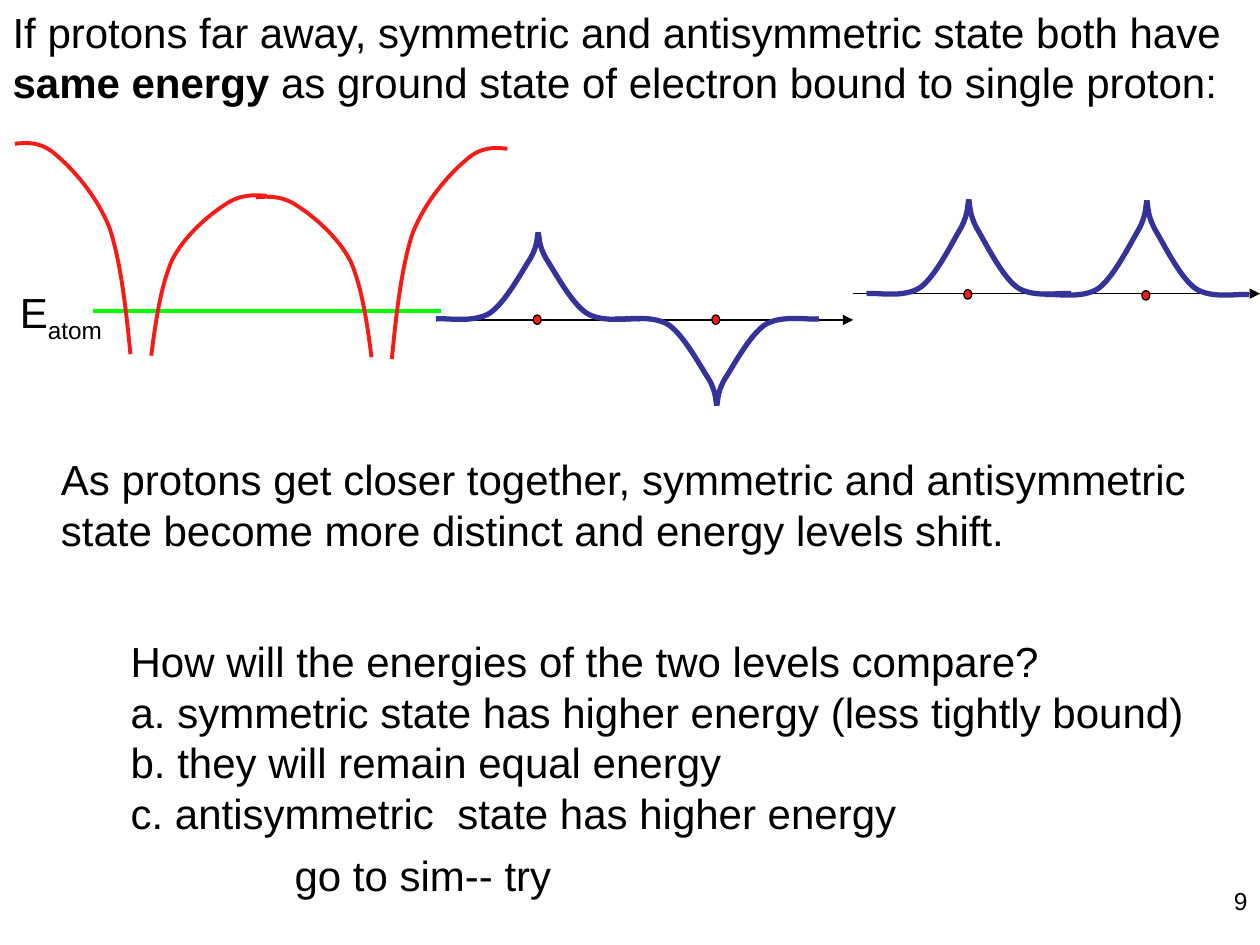
from lxml import etree
from pptx import Presentation
from pptx import util as u
from pptx.dml.color import RGBColor
from pptx.enum import shapes, text
from pptx.oxml.ns import qn

COLORS = {"text": "000000", "well": "F61B16", "level": "00FF00", "wave": "333399"}
WELL_SIDE = [(0, 0), (0.25, -0.03), (0.53, -0.05), (0.84, 0.23), (1.17, 0.51),
             (1.65, 1.04), (1.91, 1.7), (2.13, 2.36), (2.24, 3.3), (2.33, 4.24)]
PEAK_SIDE = [(2.06, 0), (1.88, -0.03), (1.3, 0.1), (0.97, -0.13), (0.66, -0.36),
             (0.33, -1.04), (0.16, -1.32), (0, -1.63), (0.03, -1.78), (0, -1.9)]


def trace_curve(parent, origin, scale, controls, color, weight):
    places = [[u.Cm(origin[i] + scale[i] * point[i]) for i in (0, 1)] for point in controls]
    builder = parent.build_freeform(*places[0])
    builder.add_line_segments(places[1:], close=False)
    curve = builder.convert_to_shape()
    lines = list(curve._element.iter(qn("a:lnTo")))
    for start in range(0, len(lines), 3):
        bend = etree.Element(qn("a:cubicBezTo"))
        lines[start].addprevious(bend)
        for line in lines[start:start + 3]:
            bend.append(line[0])
            line.getparent().remove(line)
    curve.shadow.inherit = False
    curve.fill.background()
    curve.line.color.rgb = RGBColor.from_string(COLORS[color])
    curve.line.width = u.Pt(weight)


def write_text(box, place, paragraphs, size=24, wrap=True):
    box.left, box.top, box.width, box.height = [u.Cm(value) for value in place]
    frame = box.text_frame
    frame.word_wrap = wrap
    frame.auto_size = text.MSO_AUTO_SIZE.NONE
    frame.vertical_anchor = text.MSO_ANCHOR.TOP
    for index, spans in enumerate(paragraphs):
        para = frame.add_paragraph() if index else frame.paragraphs[0]
        para.alignment = text.PP_ALIGN.LEFT
        para.space_before = u.Pt(0)
        para.font.name = "Arial"
        para.font.size = u.Pt(size)
        para.font.color.rgb = RGBColor.from_string(COLORS["text"])
        for words in spans:
            para.add_run().text = words
    return frame.paragraphs


deck = Presentation()
deck.slide_width, deck.slide_height = u.Cm(25.4), u.Cm(19.05)
page = deck.slides.add_slide(deck.slide_layouts[1])
items = page.shapes

title = write_text(items.title, (0, 0, 25.4, 2.29), [[
    "If protons far away, symmetric and antisymmetric state both have ",
    "same energy", " as ground state of electron bound to single proton:"]])
title[0].runs[1].font.bold = True

question = write_text(page.placeholders[1], (2.38, 12.69, 21.95, 4.37), [
    ["How will the energies of the two levels compare?"],
    ["a. symmetric state has higher energy (less tightly bound)"],
    ["b. they will remain equal energy"],
    ["c. antisymmetric  state has higher energy"]], wrap=False)
for para in question:
    properties = para._p.get_or_add_pPr()
    properties.set("marL", "0")
    properties.set("indent", "0")
    properties.find(qn("a:defRPr")).addprevious(etree.Element(qn("a:buNone")))

number = write_text(items.add_textbox(0, 0, 0, 0), (19.48, 17.73, 5.92, 1.32), [["9"]], 14)
number[0].alignment = text.PP_ALIGN.RIGHT

level = items.add_connector(shapes.MSO_CONNECTOR.STRAIGHT,
                            u.Cm(1.88), u.Cm(6.27), u.Cm(8.89), u.Cm(6.27))
level.line.color.rgb = RGBColor.from_string(COLORS["level"])
level.line.width = u.Pt(2.25)
etree.SubElement(level._element.spPr, qn("a:effectLst"))

energy = write_text(items.add_textbox(0, 0, 0, 0), (0.15, 5.66, 2.41, 1.27), [["E", "atom"]])
energy[0].runs[1]._r.get_or_add_rPr().set("baseline", "-25000")

for x, y, side, depth in [(0.3, 2.9, 1, 1), (5.38, 3.95, -1, 0.76),
                          (5.16, 3.98, 1, 0.76), (10.23, 3, -1, 1)]:
    trace_curve(items, (x, y), (side, depth), WELL_SIDE, "well", 2.25)

write_text(items.add_textbox(0, 0, 0, 0), (0.98, 9.02, 23.57, 2.31), [[
    "As protons get closer together, symmetric and antisymmetric state become more "
    "distinct and energy levels shift."]])

STATES = [
    (17.2, 25.4, 5.92, [(19.53, 5.92, 1), (23.12, 5.94, 1)]),
    (8.99, 17.2, 6.45, [(10.85, 6.43, 0.92), (14.45, 6.43, -0.92)]),
]
for left, right, axis_y, peaks in STATES:
    state = items.add_group_shape().shapes
    axis = state.add_connector(shapes.MSO_CONNECTOR.STRAIGHT,
                               u.Cm(left), u.Cm(axis_y), u.Cm(right), u.Cm(axis_y))
    axis.line.color.rgb = RGBColor.from_string(COLORS["text"])
    axis.line.width = u.Pt(0.75)
    etree.SubElement(axis.line._get_or_add_ln(), qn("a:tailEnd"), type="triangle")
    etree.SubElement(axis._element.spPr, qn("a:effectLst"))
    for x, y, height in peaks:
        proton = state.add_shape(shapes.MSO_SHAPE.OVAL, u.Cm(x - 0.1), u.Cm(y - 0.08),
                                 u.Cm(0.16), u.Cm(0.19))
        proton.shadow.inherit = False
        proton.fill.solid()
        proton.fill.fore_color.rgb = RGBColor.from_string(COLORS["well"])
        proton.line.color.rgb = RGBColor.from_string(COLORS["text"])
        proton.line.width = u.Pt(0.75)
    for x, y, height in peaks:
        for side in (-1, 1):
            trace_curve(state, (x, y), (side, height), PEAK_SIDE, "wave", 3)

write_text(items.add_textbox(0, 0, 0, 0), (5.69, 17, 5.74, 1.27),
           [["go to sim-- try"]], wrap=False)

deck.save("out.pptx")
